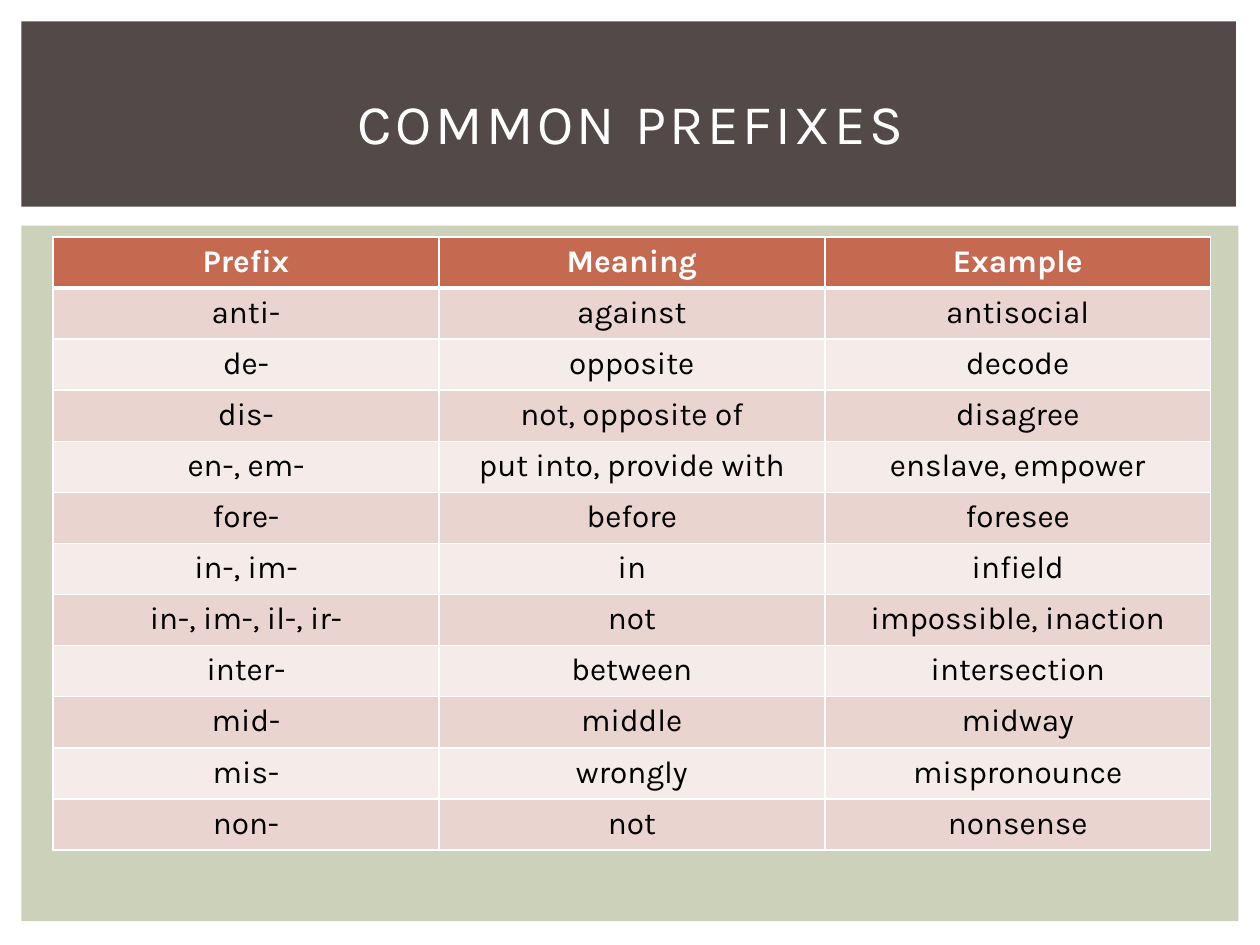
"""Build the Common Prefixes slide with its title band and table."""
from pptx import Presentation
from pptx import util as u
from pptx.dml.color import RGBColor
from pptx.enum import shapes, text
from pptx.oxml import ns
from lxml import etree

FONT = "Karla"
COLORS = {
    "white": "FFFFFF",
    "black": "000000",
    "band": "534949",
    "panel": "CCD1B9",
    "header": "C66951",
    "odd": "EAD4D0",
    "even": "F5EBE9",
}
ROWS = [
    ("Prefix", "Meaning", "Example"),
    ("anti-", "against", "antisocial"),
    ("de-", "opposite", "decode"),
    ("dis-", "not, opposite of", "disagree"),
    ("en-, em-", "put into, provide with", "enslave, empower"),
    ("fore-", "before", "foresee"),
    ("in-, im-", "in", "infield"),
    ("in-, im-, il-, ir-", "not", "impossible, inaction"),
    ("inter-", "between", "intersection"),
    ("mid-", "middle", "midway"),
    ("mis-", "wrongly", "mispronounce"),
    ("non-", "not", "nonsense"),
]


def color(name):
    return RGBColor.from_string(COLORS[name])


def add_panel(slide, left, top, width, height, fill):
    panel = slide.shapes.add_shape(
        shapes.MSO_SHAPE.RECTANGLE,
        u.Inches(left), u.Inches(top), u.Inches(width), u.Inches(height))
    panel.shadow.inherit = False
    panel.fill.solid()
    panel.fill.fore_color.rgb = color(fill)
    panel.line.fill.background()


def write(frame, words, size, ink, bold=False):
    paragraph = frame.paragraphs[0]
    paragraph.alignment = text.PP_ALIGN.CENTER
    run = paragraph.add_run()
    run.text = words
    run.font.name = FONT
    run.font.size = u.Pt(size)
    run.font.bold = bold
    run.font.color.rgb = color(ink)
    return run


def add_title(slide, words):
    title = slide.shapes.add_textbox(
        u.Inches(0.42), u.Inches(0.39), u.Inches(9.17), u.Inches(1.15))
    frame = title.text_frame
    frame.word_wrap = True
    frame.vertical_anchor = text.MSO_ANCHOR.MIDDLE
    run = write(frame, words, 32, "white")
    run.font._element.set("spc", "200")


def set_borders(cell, widths):
    properties = cell._tc.get_or_add_tcPr()
    for side, width in widths.items():
        line = etree.SubElement(
            properties, ns.qn(f"a:ln{side}"), w=str(u.Pt(width)))
        fill = etree.SubElement(line, ns.qn("a:solidFill"))
        etree.SubElement(fill, ns.qn("a:srgbClr"), val=COLORS["white"])


def add_prefix_table(slide, rows):
    columns = len(rows[0])
    table = slide.shapes.add_table(
        len(rows), columns, u.Inches(0.42), u.Inches(1.88),
        u.Inches(9.19), u.Inches(4.87)).table
    for row, entries in enumerate(rows):
        header = row == 0
        fill = "header" if header else ("even", "odd")[row % 2]
        widths = {"L": 1, "R": 1, "T": 3 if row == 1 else 1, "B": 3 if header else 1}
        for column, words in enumerate(entries):
            cell = table.cell(row, column)
            set_borders(cell, widths)
            cell.fill.solid()
            cell.fill.fore_color.rgb = color(fill)
            write(cell.text_frame, words, 18, "white" if header else "black", header)


def main():
    deck = Presentation()
    deck.slide_width, deck.slide_height = u.Inches(10), u.Inches(7.5)
    slide = deck.slides.add_slide(deck.slide_layouts[6])
    add_panel(slide, 0.17, 1.79, 9.66, 5.52, "panel")
    add_panel(slide, 0.17, 0.17, 9.64, 1.47, "band")
    add_prefix_table(slide, ROWS)
    add_title(slide, "COMMON PREFIXES")
    deck.save("out.pptx")


if __name__ == "__main__":
    main()
